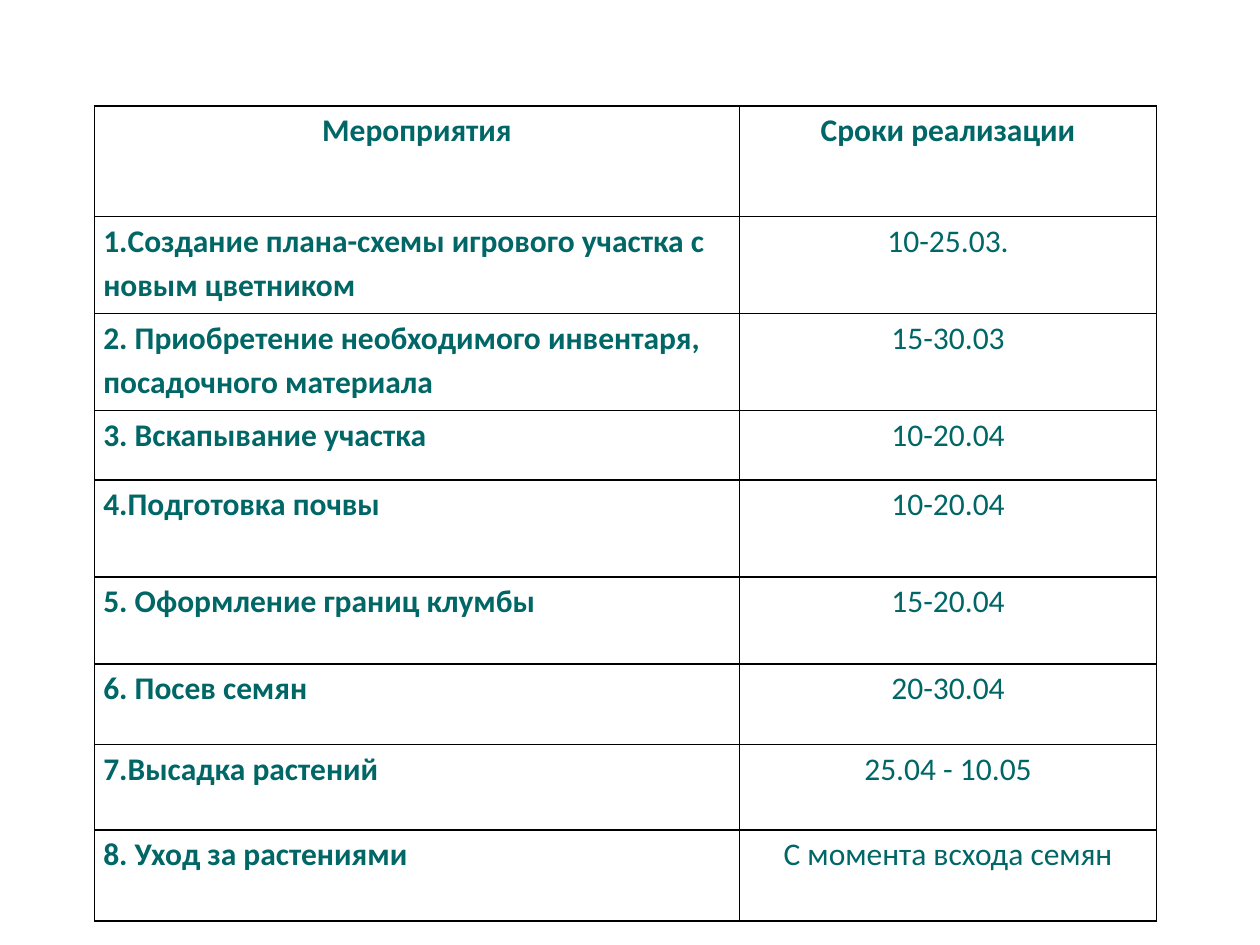
from dataclasses import dataclass

from lxml.etree import SubElement
from pptx import Presentation
from pptx.dml.color import RGBColor
from pptx.enum.text import MSO_ANCHOR, PP_ALIGN as Align
from pptx.oxml.ns import qn
from pptx.table import Table, _Cell as Cell
from pptx.util import Inches, Pt


@dataclass(frozen=True)
class Theme:
    font: str = "Calibri"
    size: int = 18
    text: str = "006666"
    border: str = "000000"
    border_width: int = 1
    line_spacing: float = 1.15
    side_margin: float = 0.07


@dataclass(frozen=True)
class Activity:
    name: str
    dates: str
    height: float
    space_after: int = 10


THEME = Theme()
COLUMN_WIDTHS = (5.12, 3.31)
HEADER = Activity("Мероприятия", "Сроки реализации", 0.88)
ACTIVITIES = (
    Activity("1.Создание плана-схемы игрового участка с новым цветником", "10-25.03.", 0.77, 0),
    Activity("2. Приобретение необходимого инвентаря, посадочного материала", "15-30.03", 0.77, 0),
    Activity("3. Вскапывание участка", "10-20.04", 0.55),
    Activity("4.Подготовка почвы", "10-20.04", 0.77),
    Activity("5. Оформление границ клумбы", "15-20.04", 0.69),
    Activity("6. Посев семян", "20-30.04", 0.64),
    Activity("7.Высадка растений", "25.04 - 10.05", 0.68),
    Activity("8. Уход за растениями", "С момента всхода семян", 0.72),
)


def draw_borders(cell: Cell) -> None:
    """Outline a cell on all four sides, keeping the lines ahead of its fill."""
    properties = cell._tc.get_or_add_tcPr()
    for position, side in enumerate(("a:lnL", "a:lnR", "a:lnT", "a:lnB")):
        line = SubElement(properties, qn(side), w=str(Pt(THEME.border_width)))
        fill = SubElement(line, qn("a:solidFill"))
        SubElement(fill, qn("a:srgbClr"), val=THEME.border)
        properties.insert(position, line)


def fill_cell(cell: Cell, text: str, align: Align, bold: bool, space_after: int) -> None:
    """Write one formatted paragraph into a bordered, unfilled cell."""
    cell.fill.background()
    draw_borders(cell)
    cell.margin_left = cell.margin_right = Inches(THEME.side_margin)
    cell.margin_top = cell.margin_bottom = 0
    cell.vertical_anchor = MSO_ANCHOR.TOP
    paragraph = cell.text_frame.paragraphs[0]
    paragraph.alignment = align
    paragraph.line_spacing = THEME.line_spacing
    paragraph.space_after = Pt(space_after)
    run = paragraph.add_run()
    run.text = text
    run.font.name = THEME.font
    run.font.size = Pt(THEME.size)
    run.font.bold = bold
    run.font.color.rgb = RGBColor.from_string(THEME.text)


def fill_row(table: Table, index: int, activity: Activity, is_header: bool) -> None:
    """Set the height of a row and write its activity and dates."""
    table.rows[index].height = Inches(activity.height)
    name_align = Align.CENTER if is_header else Align.LEFT
    fill_cell(table.cell(index, 0), activity.name, name_align, True, activity.space_after)
    fill_cell(table.cell(index, 1), activity.dates, Align.CENTER, is_header, activity.space_after)


def main() -> None:
    """Build the schedule slide and save it."""
    presentation = Presentation()
    presentation.slide_width, presentation.slide_height = Inches(10), Inches(7.5)
    slide = presentation.slides.add_slide(presentation.slide_layouts[6])
    rows = (HEADER, *ACTIVITIES)
    table = slide.shapes.add_table(
        len(rows), len(COLUMN_WIDTHS), Inches(0.75), Inches(0.84),
        Inches(sum(COLUMN_WIDTHS)), Inches(sum(row.height for row in rows)),
    ).table
    table.horz_banding = False
    for column, width in zip(table.columns, COLUMN_WIDTHS):
        column.width = Inches(width)
    for index, activity in enumerate(rows):
        fill_row(table, index, activity, activity is HEADER)
    presentation.save("out.pptx")


if __name__ == "__main__":
    main()
